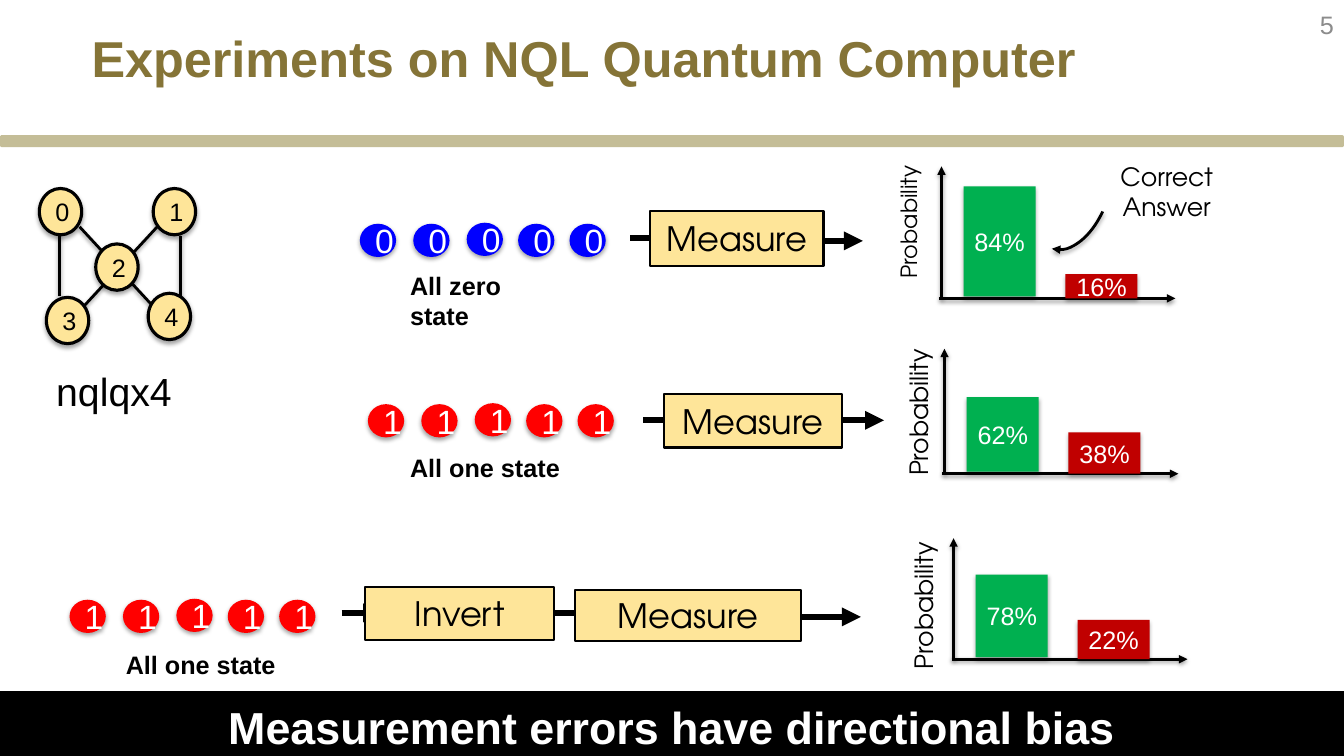
from dataclasses import dataclass

from pptx import Presentation, oxml, util as u
from pptx.dml import color
from pptx.enum import shapes, text
from pptx.oxml import ns

CELL = 0.1  # inches; the slide is a grid of 133.3 columns by 75 rows
COLUMNS, ROWS = 133.33, 75


@dataclass(frozen=True)
class Theme:
    black: str = "000000"
    white: str = "FFFFFF"
    title: str = "857437"
    rule: str = "C4BD97"
    box: str = "FEE599"
    zero: str = "0000FF"
    one: str = "FF0000"
    correct: str = "00B050"
    wrong: str = "C00000"
    number: str = "8C8C8C"
    body_font: str = "Arial"
    label_font: str = "TeX Gyre Adventor"
    title_size: int = 36
    message_size: int = 32
    device_size: int = 28
    gate_size: int = 24
    text_size: int = 18
    small_size: int = 16


def grid(cells):
    return u.Inches(cells * CELL)


def rgb(value):
    return color.RGBColor.from_string(value)


class Canvas:
    def __init__(self, slide, theme):
        self.slide, self.theme = slide, theme

    def effects(self, item, opacity=0, distance=0):
        """Give an item a soft drop shadow, or none at zero opacity."""
        shadow = (f'<a:outerShdw blurRad="{u.Pt(3.1)}" dist="{u.Pt(distance)}" dir="5400000" '
                  f'rotWithShape="0"><a:srgbClr val="{self.theme.black}">'
                  f'<a:alpha val="{opacity * 1000}"/></a:srgbClr></a:outerShdw>')
        item._element.spPr.append(oxml.parse_xml(
            f'<a:effectLst {ns.nsdecls("a")}>{shadow if opacity else ""}</a:effectLst>'))

    def arrowhead(self, item):
        item.line._get_or_add_ln().append(
            oxml.parse_xml(f'<a:tailEnd {ns.nsdecls("a")} type="triangle"/>'))

    def put_text(self, shape, words, size, ink, font=None, bold=False, align="CENTER"):
        paragraph = shape.text_frame.paragraphs[0]
        paragraph.text = words
        paragraph.alignment = text.PP_ALIGN[align]
        paragraph.font.name = font or self.theme.body_font
        paragraph.font.size = u.Pt(size)
        paragraph.font.bold = bold
        paragraph.font.color.rgb = rgb(ink)

    def label(self, words, left, top, width, height, size=None, ink=None, wrap=True,
              align="LEFT", **style):
        box = self.slide.shapes.add_textbox(*map(grid, (left, top, width, height)))
        box.text_frame.word_wrap = wrap
        self.put_text(box, words, size or self.theme.text_size, ink or self.theme.black,
                      align=align, **style)
        return box

    def shape(self, kind, left, top, width, height, fill=None, line=0, shadow=False):
        shape = self.slide.shapes.add_shape(
            shapes.MSO_SHAPE[kind], *map(grid, (left, top, width, height)))
        if fill:
            shape.fill.solid()
            shape.fill.fore_color.rgb = rgb(fill)
        else:
            shape.fill.background()
        if line:
            shape.line.color.rgb = rgb(self.theme.black)
            shape.line.width = u.Pt(line)
        else:
            shape.line.fill.background()
        if shadow:
            self.effects(shape, 35, 1.8)
        else:
            shape.shadow.inherit = False
        return shape

    def line(self, start, end, width=2, arrow=False, shadow=True):
        line = self.slide.shapes.add_connector(
            shapes.MSO_CONNECTOR.STRAIGHT, *map(grid, (*start, *end)))
        line.line.color.rgb = rgb(self.theme.black)
        line.line.width = u.Pt(width)
        if arrow:
            self.arrowhead(line)
        if shadow:
            self.effects(line, 38, 1.6)
        else:
            self.effects(line)

    def qubits(self, digit, fill, left, top):
        for offset, lift in ((0, 0), (5.3, 0), (10.6, 0.1), (15.7, 0), (20.8, 0)):
            qubit = self.shape("OVAL", left + offset, top - lift, 3.6, 3.3, fill, shadow=True)
            self.put_text(qubit, digit, self.theme.gate_size, self.theme.white)

    def circuit(self, wires, gates):
        for start, end, row in wires:
            self.line((start, row), (end, row), 4.5, arrow=True, shadow=False)
        for name, *place in gates:
            gate = self.shape("RECTANGLE", *place, self.theme.box, line=1.5)
            self.put_text(gate, name, self.theme.gate_size, self.theme.black,
                          self.theme.label_font)

    def bars(self, left, base, axis_height, correct, wrong):
        self.line((left, base), (left, base - axis_height), arrow=True)
        self.line((left - 0.2, base), (left + 23.2, base), arrow=True)
        for (percent, height), fill, offset, gap in (
                (wrong, self.theme.wrong, 12.3, 0), (correct, self.theme.correct, 2.2, 0.2)):
            bar = self.shape("RECTANGLE", left + offset, base - gap - height, 7.15, height,
                             fill, shadow=True)
            self.put_text(bar, f"{percent}%", self.theme.text_size, self.theme.white)

    def axis_title(self, middle_x, middle_y, width, size):
        height = 4 if size == self.theme.text_size else 3.7
        title = self.label("Probability", middle_x - width / 2, middle_y - height / 2,
                           width, height, size, font=self.theme.label_font)
        title.rotation = 270


def main():
    presentation = Presentation()
    presentation.slide_width, presentation.slide_height = grid(COLUMNS), grid(ROWS)
    theme = Theme()
    canvas = Canvas(presentation.slides.add_slide(presentation.slide_layouts[6]), theme)

    # Title, rule and slide number
    canvas.shape("ROUNDED_RECTANGLE", 0, 13.4, COLUMNS, 1.2, theme.rule)
    canvas.label("Experiments on NQL Quantum Computer", 8.1, 2.2, 108.6, 12.5,
                 theme.title_size, theme.title, bold=True)
    number = canvas.label("5", 128, 0, 5.3, 4.8, ink=theme.number, align="RIGHT")
    number.text_frame.vertical_anchor = text.MSO_ANCHOR.MIDDLE

    # Device: couplings between qubits, then the qubits
    for start, end in (((15.2, 30.4), (7.9, 22.5)), ((15.6, 22.5), (8.3, 30.4)),
                       ((17.9, 23.4), (17.9, 29.7)), ((5.9, 23.1), (5.9, 29.4))):
        canvas.line(start, end)
    for index, (left, top) in enumerate(
            ((3.9, 18.7), (15.2, 18.7), (9.5, 24.2), (4.6, 29.5), (14.7, 29.1))):
        node = canvas.shape("OVAL", left, top, 4.2, 4.6, theme.box, line=2.25, shadow=True)
        canvas.put_text(node, str(index), theme.text_size, theme.black)
    canvas.label("nqlqx4", 4.6, 35.9, 14.7, 5.7, theme.device_size, wrap=False)

    # Prepared states
    for state, digit, fill, left, top, label_left, label_top in (
            ("zero", "0", theme.zero, 35.7, 22.2, 39.7, 26.3),
            ("one", "1", theme.one, 36.5, 40.1, 39.7, 44.4),
            ("one", "1", theme.one, 6.9, 59.5, 11.5, 63.9)):
        canvas.qubits(digit, fill, left, top)
        canvas.label(f"All {state} state", label_left, label_top, 17.4, 4, wrap=False, bold=True)

    # Circuits: wires as start, end, row; gates as name and place
    canvas.circuit([(62.5, 66.5, 23.6), (79.6, 85.6, 23.9)],
                   [("Measure", 64.5, 20.9, 17.2, 5.5)])
    canvas.circuit([(63.8, 67.8, 41.7), (83.5, 87.7, 41.7)],
                   [("Measure", 65.9, 39.1, 17.6, 5.3)])
    canvas.circuit([(33.9, 37.9, 60.8), (55, 58.9, 60.8), (79.4, 85.4, 61.2)],
                   [("Measure", 57, 58.5, 22.5, 5.1), ("Invert", 36.2, 58.2, 18.8, 5.3)])

    # Outcome probabilities: each bar is a percentage and its drawn height
    canvas.bars(93.4, 29.6, 13.1, (84, 10.9), (16, 2.4))
    canvas.bars(93.7, 47, 12.4, (62, 7.4), (38, 4.1))
    canvas.bars(94.6, 65.4, 12, (78, 8.2), (22, 3.9))
    canvas.axis_title(90.15, 21.55, 14.1, theme.small_size)
    canvas.axis_title(91.1, 38.9, 18.6, theme.text_size)
    canvas.axis_title(91.65, 59.4, 15.9, theme.text_size)

    # Pointer to the correct answer
    canvas.label("Correct Answer", 109.1, 15.5, 13.3, 7.1, align="CENTER", font=theme.label_font)
    pointer = canvas.shape("ARC", 98.9, 13.5, 14.4, 8.4, line=2, shadow=True)
    pointer.adjustments[0], pointer.adjustments[1] = 181.07, 0.53
    pointer.rotation = 103.2
    canvas.arrowhead(pointer)

    # Closing message
    message = canvas.shape("RECTANGLE", 0, 68.9, COLUMNS, 6.1, theme.black, line=4.5)
    message.text_frame.vertical_anchor = text.MSO_ANCHOR.TOP
    canvas.put_text(message, "Measurement errors have directional bias",
                    theme.message_size, theme.white, bold=True)

    presentation.save("out.pptx")


if __name__ == "__main__":
    main()
